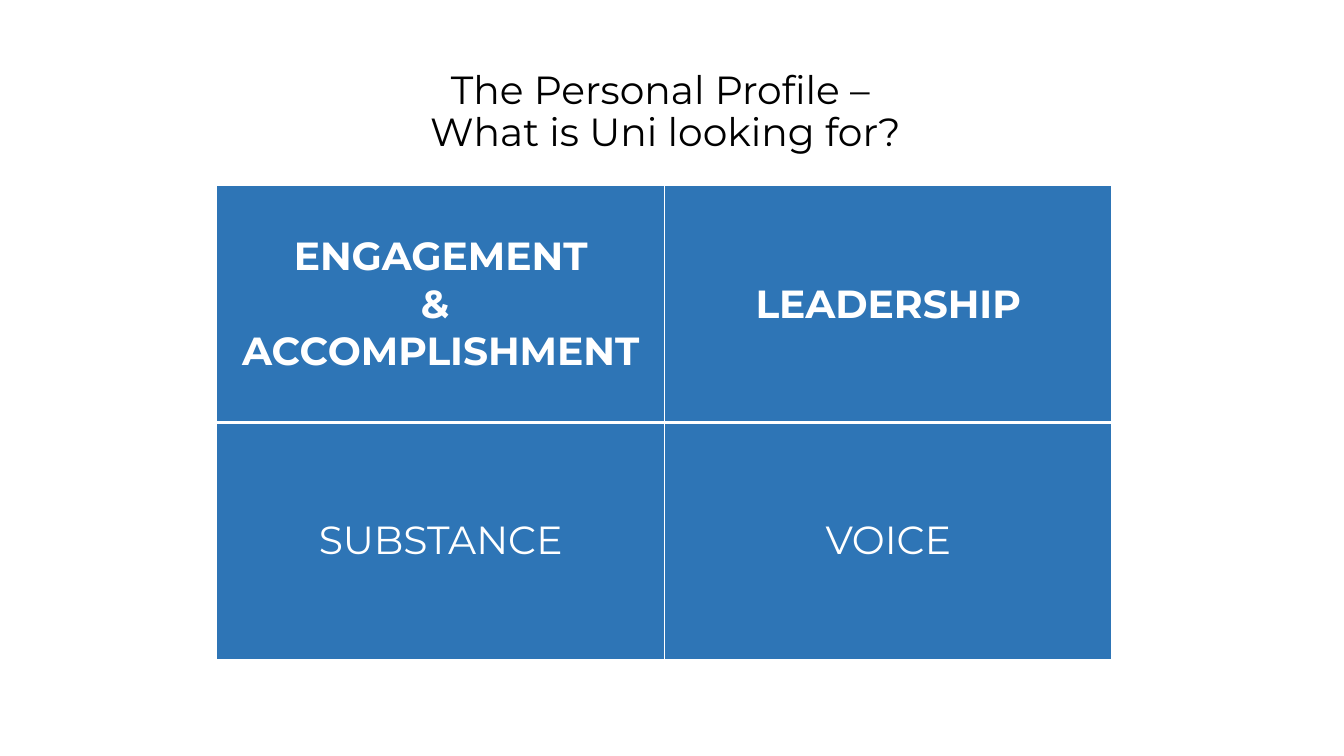
from dataclasses import dataclass

from lxml import etree
from pptx import Presentation
from pptx.dml.color import RGBColor
from pptx.enum.text import MSO_ANCHOR, MSO_AUTO_SIZE, PP_ALIGN
from pptx.oxml.ns import qn
from pptx.slide import Slide
from pptx.table import _Cell
from pptx.text.text import TextFrame
from pptx.util import Inches, Pt

CENTER = PP_ALIGN.CENTER
MIDDLE, BOTTOM = MSO_ANCHOR.MIDDLE, MSO_ANCHOR.BOTTOM
NO_AUTOFIT = MSO_AUTO_SIZE.NONE

SLIDE_WIDTH, SLIDE_HEIGHT = Inches(13.33), Inches(7.5)
FONT, FONT_SIZE = "Montserrat", Pt(28)
BLACK, WHITE, BLUE = "000000", "FFFFFF", "2E75B6"
THIN, THICK = Pt(1), Pt(3)


@dataclass(frozen=True)
class Area:
    """A rectangle on the slide, in inches."""
    left: float
    top: float
    width: float
    height: float

    def lengths(self) -> list[int]:
        return [Inches(n) for n in (self.left, self.top, self.width, self.height)]


@dataclass(frozen=True)
class Quality:
    row: int
    column: int
    text: str
    bold: bool


TITLE_AREA = Area(1.56, 0.96, 10.08, 0.63)
GRID_AREA = Area(2.15, 1.84, 8.88, 4.7)
GRID_SIZE = 2
TITLE = "The Personal Profile – \vWhat is Uni looking for?"
QUALITIES = [
    Quality(0, 0, "ENGAGEMENT\n& \nACCOMPLISHMENT", True),
    Quality(0, 1, "LEADERSHIP", True),
    Quality(1, 0, "SUBSTANCE", False),
    Quality(1, 1, "VOICE", False),
]


def color(value: str) -> RGBColor:
    return RGBColor.from_string(value)


def write(text_frame: TextFrame, text: str, text_color: str, bold: bool = False,
          line_spacing: float = 1.0) -> None:
    text_frame.text = text
    for paragraph in text_frame.paragraphs:
        paragraph.alignment = CENTER
        paragraph.line_spacing = line_spacing
        for run in paragraph.runs:
            run.font.name = FONT
            run.font.size = FONT_SIZE
            run.font.bold = bold
            run.font.color.rgb = color(text_color)


def add_borders(cell: _Cell, top: int, bottom: int) -> None:
    properties = cell._tc.get_or_add_tcPr()
    widths = {"a:lnL": THIN, "a:lnR": THIN, "a:lnT": top, "a:lnB": bottom}
    for tag, width in widths.items():
        line = etree.SubElement(properties, qn(tag), w=str(width))
        fill = etree.SubElement(line, qn("a:solidFill"))
        etree.SubElement(fill, qn("a:srgbClr"), val=WHITE)


def add_title(slide: Slide) -> None:
    title = slide.shapes.title
    title.left, title.top, title.width, title.height = TITLE_AREA.lengths()
    text_frame = title.text_frame
    write(text_frame, TITLE, BLACK, line_spacing=0.9)
    text_frame.word_wrap = True
    text_frame.auto_size = NO_AUTOFIT
    text_frame.vertical_anchor = BOTTOM


def add_quality_grid(slide: Slide) -> None:
    table = slide.shapes.add_table(GRID_SIZE, GRID_SIZE, *GRID_AREA.lengths()).table
    table.first_row = table.horz_banding = False
    for quality in QUALITIES:
        cell = table.cell(quality.row, quality.column)
        is_top_row = quality.row == 0
        add_borders(cell, top=THIN if is_top_row else THICK,
                    bottom=THICK if is_top_row else THIN)
        cell.fill.solid()
        cell.fill.fore_color.rgb = color(BLUE)
        cell.vertical_anchor = MIDDLE
        write(cell.text_frame, quality.text, WHITE, quality.bold)


def main() -> None:
    presentation = Presentation()
    presentation.slide_width = SLIDE_WIDTH
    presentation.slide_height = SLIDE_HEIGHT
    slide = presentation.slides.add_slide(presentation.slide_layouts[0])
    subtitle = slide.placeholders[1].element
    subtitle.getparent().remove(subtitle)
    add_title(slide)
    add_quality_grid(slide)
    presentation.save("out.pptx")


if __name__ == "__main__":
    main()
